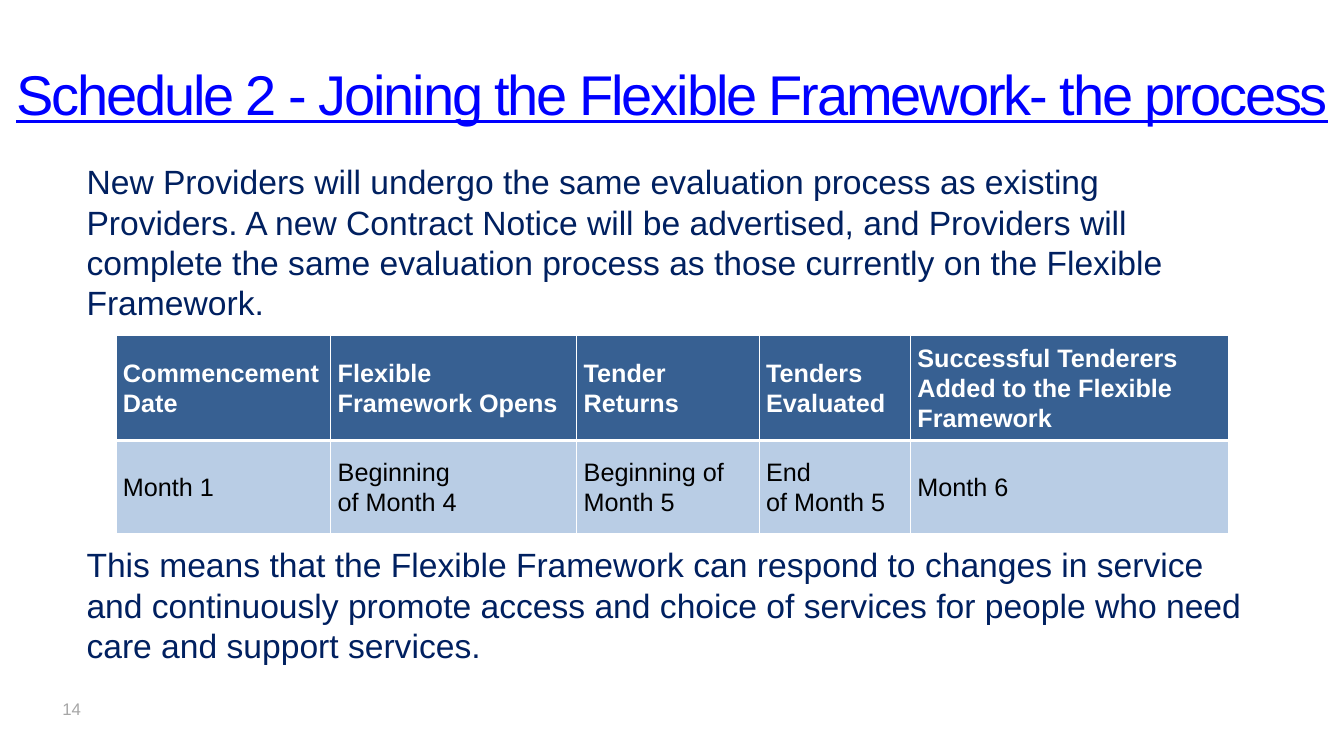
from dataclasses import dataclass

from lxml.etree import SubElement
from pptx import Presentation
from pptx.dml.color import RGBColor
from pptx.enum.text import MSO_ANCHOR, MSO_AUTO_SIZE, PP_ALIGN
from pptx.oxml.ns import qn
from pptx.util import Inches, Pt


@dataclass(frozen=True)
class Theme:
    font: str = "Arial"
    title: str = "0000FF"
    body: str = "002060"
    header_fill: str = "376092"
    row_fill: str = "B9CDE5"
    header_text: str = "FFFFFF"
    row_text: str = "000000"
    border: str = "FFFFFF"
    number: str = "A6A6A6"
    title_size: int = 40
    body_size: int = 24
    table_size: int = 18
    number_size: int = 12


THEME = Theme()

TITLE = "Schedule 2 - Joining the Flexible Framework- the process"
INTRO = (
    "New Providers will undergo the same evaluation process as existing Providers. "
    "A new Contract Notice will be advertised, and Providers will complete the same "
    "evaluation process as those currently on the Flexible Framework."
)
OUTCOME = (
    "This means that the Flexible Framework can respond to changes in service and "
    "continuously promote access and choice of services for people who need care "
    "and support services."
)
# Stage, timing, column width in inches
STAGES = [
    ("Commencement Date", "Month 1", 2.13),
    ("Flexible Framework Opens", "Beginning\nof Month 4", 2.44),
    ("Tender\nReturns", "Beginning of Month 5", 1.81),
    ("Tenders Evaluated", "End\nof Month 5", 1.5),
    ("Successful Tenderers Added to the Flexible Framework", "Month 6", 3.16),
]
HEADER_HEIGHT, TIMING_HEIGHT = 1.04, 0.92


def write(paragraph, text, size, color, bold=False):
    paragraph.text = text
    font = paragraph.font
    font.name, font.size, font.bold = THEME.font, Pt(size), bold
    font.color.rgb = RGBColor.from_string(color)


def place(shape, left, top, width, height):
    shape.left, shape.top = Inches(left), Inches(top)
    shape.width, shape.height = Inches(width), Inches(height)


def add_title(slide, left, top, width, height):
    title = slide.shapes.title
    place(title, left, top, width, height)
    frame = title.text_frame
    frame.word_wrap = True
    frame.auto_size = MSO_AUTO_SIZE.NONE
    frame.vertical_anchor = MSO_ANCHOR.MIDDLE
    heading = frame.paragraphs[0]
    write(heading, TITLE, THEME.title_size, THEME.title)
    heading.alignment = PP_ALIGN.CENTER
    heading.font.underline = True
    # Tighter letter spacing, in hundredths of a point
    heading.runs[0].font._element.set("spc", "-150")


def add_text(slide, text, size, color, left, top, width, height):
    box = slide.shapes.add_textbox(
        Inches(left), Inches(top), Inches(width), Inches(height)
    )
    box.text_frame.word_wrap = True
    write(box.text_frame.paragraphs[0], text, size, color)


def set_borders(cell, bottom):
    properties = cell._tc.get_or_add_tcPr()
    for side, points in (("L", 1), ("R", 1), ("T", 1), ("B", bottom)):
        line = SubElement(properties, qn(f"a:ln{side}"), w=str(Pt(points)))
        fill = SubElement(line, qn("a:solidFill"))
        SubElement(fill, qn("a:srgbClr"), val=THEME.border)


def format_cell(cell, text, is_header):
    set_borders(cell, bottom=3 if is_header else 1)
    cell.fill.solid()
    cell.fill.fore_color.rgb = RGBColor.from_string(
        THEME.header_fill if is_header else THEME.row_fill
    )
    cell.margin_left = cell.margin_right = Inches(0.07)
    cell.margin_top = cell.margin_bottom = 0
    cell.vertical_anchor = MSO_ANCHOR.MIDDLE
    label = cell.text_frame.paragraphs[0]
    label.line_spacing = 1.06
    label.space_after = Pt(8)
    color = THEME.header_text if is_header else THEME.row_text
    write(label, text, THEME.table_size, color, bold=is_header)


def add_timetable(slide, left, top):
    heights = (HEADER_HEIGHT, TIMING_HEIGHT)
    width = sum(stage[2] for stage in STAGES)
    table = slide.shapes.add_table(
        len(heights), len(STAGES),
        Inches(left), Inches(top), Inches(width), Inches(sum(heights)),
    ).table
    table.horz_banding = False
    for row, height in zip(table.rows, heights):
        row.height = Inches(height)
    for index, (stage, timing, column_width) in enumerate(STAGES):
        table.columns[index].width = Inches(column_width)
        format_cell(table.cell(0, index), stage, is_header=True)
        format_cell(table.cell(1, index), timing, is_header=False)


def main():
    presentation = Presentation()
    presentation.slide_width = Inches(13.33)
    presentation.slide_height = Inches(7.5)
    slide = presentation.slides.add_slide(presentation.slide_layouts[5])

    # Page number
    add_text(slide, "14", THEME.number_size, THEME.number, 0.52, 6.88, 2.19, 0.3)
    # Heading
    add_title(slide, 0, 0.3, 13.33, 1.25)
    # Timetable between the two paragraphs
    add_timetable(slide, 1.15, 3.33)
    add_text(slide, INTRO, THEME.body_size, THEME.body, 0.76, 1.55, 11.82, 1.72)
    add_text(slide, OUTCOME, THEME.body_size, THEME.body, 0.76, 5.35, 11.82, 1.31)

    presentation.save("out.pptx")


if __name__ == "__main__":
    main()
